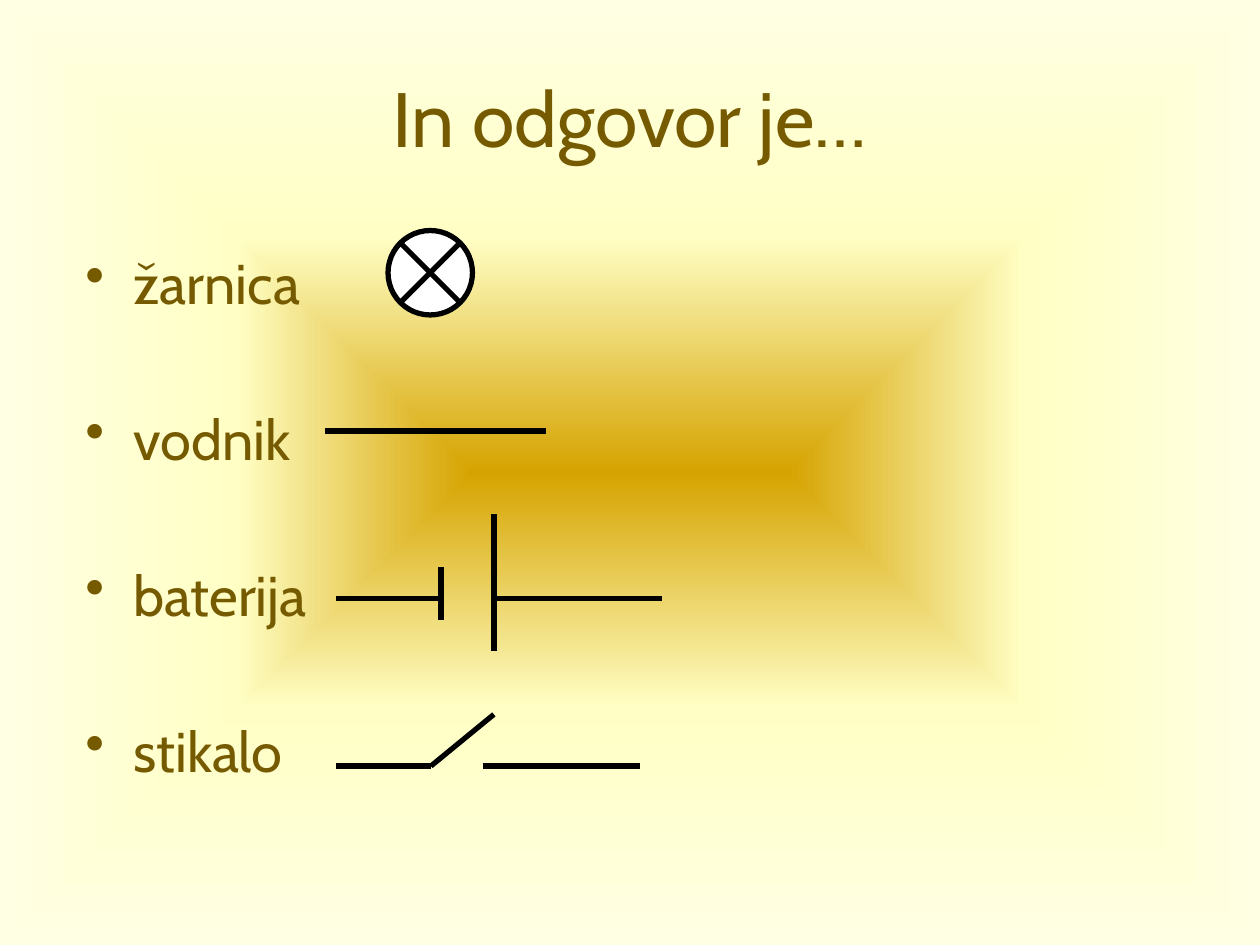
from typing import NamedTuple

from lxml import etree
from pptx import Presentation
from pptx.dml.color import RGBColor
from pptx.enum.shapes import MSO_CONNECTOR, MSO_SHAPE
from pptx.enum.text import MSO_ANCHOR, PP_ALIGN
from pptx.oxml import parse_xml
from pptx.oxml.ns import nsdecls, qn
from pptx.slide import Slide
from pptx.text.text import _Paragraph as Paragraph
from pptx.util import Inches, Pt

STRAIGHT = MSO_CONNECTOR.STRAIGHT
LAMP = MSO_SHAPE.FLOWCHART_SUMMING_JUNCTION
MIDDLE, TOP = MSO_ANCHOR.MIDDLE, MSO_ANCHOR.TOP
CENTER = PP_ALIGN.CENTER

FONT = "Cabin"
COLORS = {"text": "765A00", "wire": "000000", "lamp": "FFFFFF"}
BACKGROUND_STOPS = ((0, "D6A300"), (50, "FFFFC5"), (100, "FFFFE3"))
LINE_WIDTH = Pt(3)
COMPONENTS = ("žarnica", "vodnik", "baterija", "stikalo")
COMPONENT_GAP = Pt(50.8)


class Wire(NamedTuple):
    """Start and end of a straight line, in inches."""
    x1: float
    y1: float
    x2: float
    y2: float


CONDUCTOR = (Wire(2.58, 3.42, 4.33, 3.42),)
BATTERY = (
    Wire(2.67, 4.75, 3.5, 4.75),
    Wire(3.5, 4.5, 3.5, 4.92),
    Wire(3.92, 4.08, 3.92, 5.17),
    Wire(3.92, 4.75, 5.25, 4.75),
)
SWITCH = (
    Wire(2.67, 6.08, 3.42, 6.08),
    Wire(3.42, 6.08, 3.92, 5.67),
    Wire(3.83, 6.08, 5.08, 6.08),
)


def color(name: str) -> RGBColor:
    return RGBColor.from_string(COLORS[name])


def set_background(slide: Slide) -> None:
    """Fill the background with a gradient that spreads from the centre."""
    stops = "".join(
        f'<a:gs pos="{percent * 1000}"><a:srgbClr val="{value}"/></a:gs>'
        for percent, value in BACKGROUND_STOPS
    )
    background = parse_xml(
        f'<p:bg {nsdecls("p", "a")}><p:bgPr><a:gradFill rotWithShape="0">'
        f'<a:gsLst>{stops}</a:gsLst><a:path path="shape">'
        '<a:fillToRect l="50000" t="50000" r="50000" b="50000"/></a:path>'
        '</a:gradFill><a:effectLst/></p:bgPr></p:bg>'
    )
    slide.element.cSld.insert(0, background)


def set_font(paragraph: Paragraph, size: int) -> None:
    paragraph.font.name = FONT
    paragraph.font.size = Pt(size)
    paragraph.font.color.rgb = color("text")


def add_title(slide: Slide, text: str) -> None:
    title = slide.shapes.title
    title.left, title.top = Inches(0.5), Inches(0.3)
    title.width, title.height = Inches(9), Inches(1.25)
    frame = title.text_frame
    frame.text = text
    frame.vertical_anchor = MIDDLE
    paragraph = frame.paragraphs[0]
    paragraph.alignment = CENTER
    set_font(paragraph, 44)


def add_bullet(paragraph: Paragraph) -> None:
    properties = paragraph._p.get_or_add_pPr()
    indent = Inches(0.38)
    properties.set("marL", str(indent))
    properties.set("indent", str(-indent))
    etree.SubElement(properties, qn("a:buChar")).set("char", "•")


def add_component_list(slide: Slide) -> None:
    box = slide.shapes.add_textbox(
        Inches(0.58), Inches(1.92), Inches(9), Inches(4.95))
    frame = box.text_frame
    frame.word_wrap = True
    frame.vertical_anchor = TOP
    for index, component in enumerate(COMPONENTS):
        paragraph = frame.add_paragraph() if index else frame.paragraphs[0]
        paragraph.text = component
        add_bullet(paragraph)
        if index:
            paragraph.space_before = COMPONENT_GAP
        set_font(paragraph, 32)


def add_lamp(slide: Slide) -> None:
    lamp = slide.shapes.add_shape(
        LAMP, Inches(3.08), Inches(1.83), Inches(0.67), Inches(0.67))
    lamp.shadow.inherit = False
    lamp.fill.solid()
    lamp.fill.fore_color.rgb = color("lamp")
    lamp.line.color.rgb = color("wire")
    lamp.line.width = LINE_WIDTH


def add_wire(slide: Slide, wire: Wire) -> None:
    connector = slide.shapes.add_connector(
        STRAIGHT, *(Inches(length) for length in wire))
    connector.line.color.rgb = color("wire")
    connector.line.width = LINE_WIDTH
    etree.SubElement(connector._element.spPr, qn("a:effectLst"))


def main() -> None:
    presentation = Presentation()
    presentation.slide_width = Inches(10)
    presentation.slide_height = Inches(7.5)
    title_only = presentation.slide_layouts[5]
    slide = presentation.slides.add_slide(title_only)
    set_background(slide)
    add_title(slide, "In odgovor je…")
    add_component_list(slide)
    add_lamp(slide)
    for wire in CONDUCTOR + BATTERY + SWITCH:
        add_wire(slide, wire)
    presentation.save("out.pptx")


if __name__ == "__main__":
    main()
